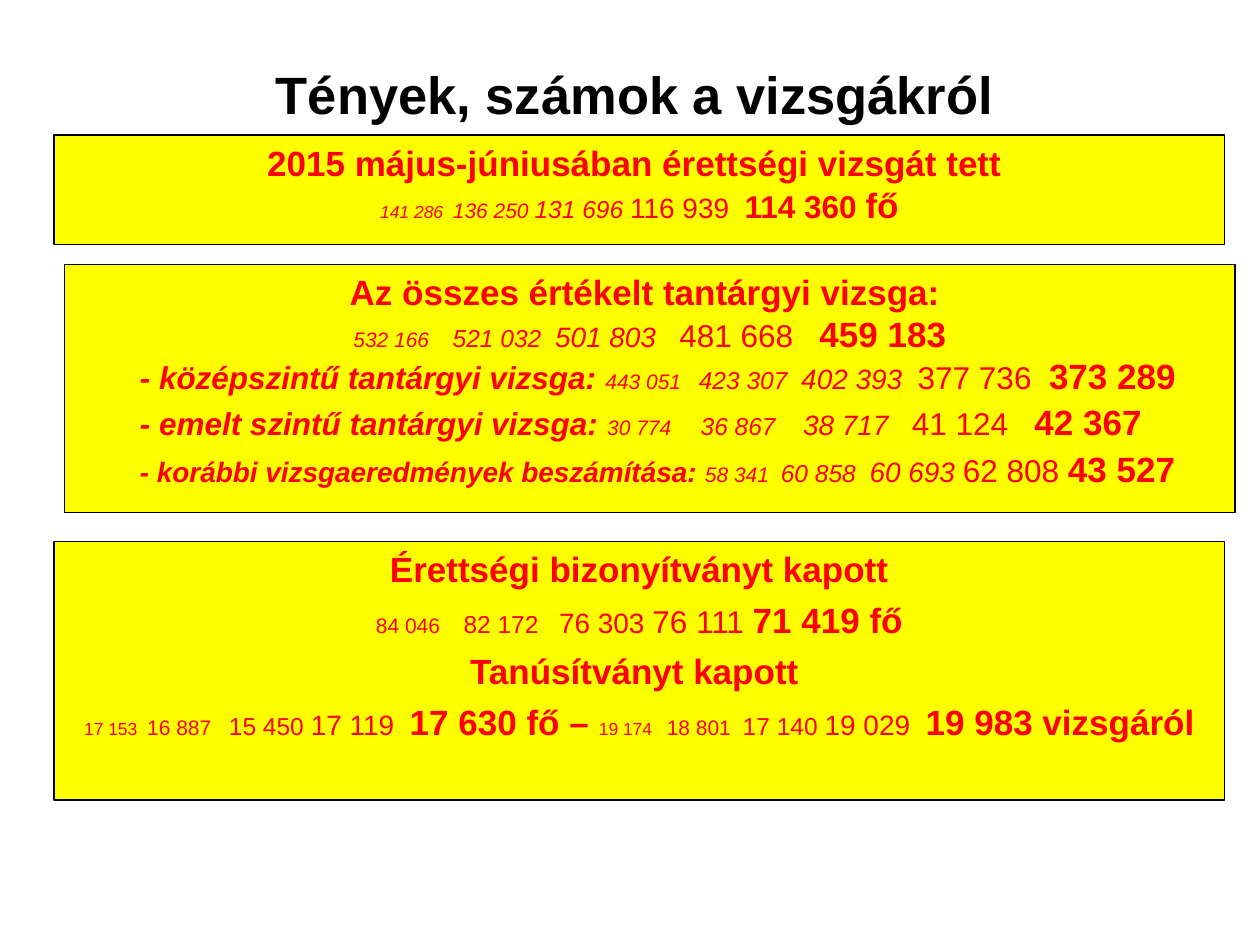
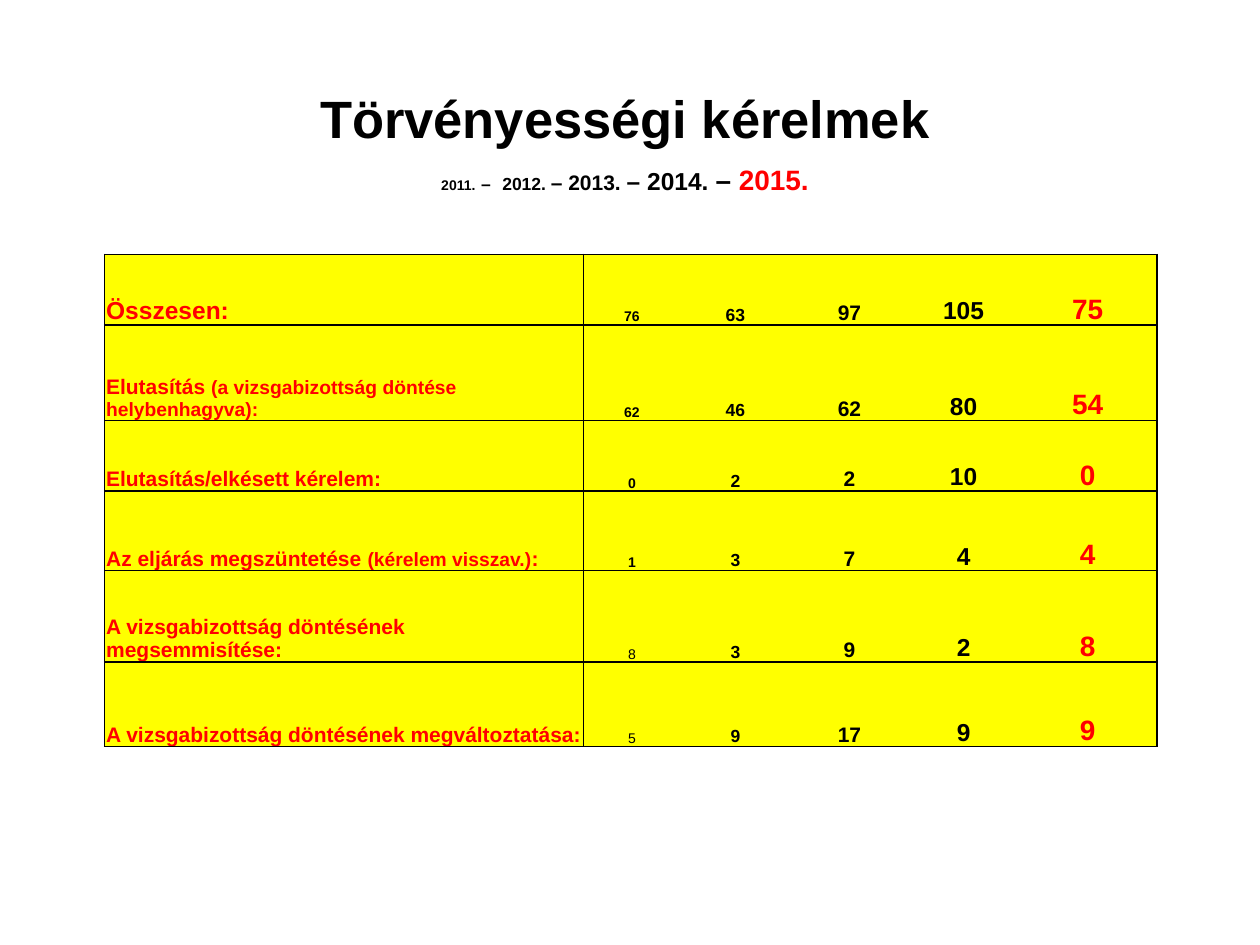
"""Build two slides of facts and figures about the 2015 school-leaving exams."""
from lxml.etree import SubElement
from pptx import Presentation
from pptx.dml.color import RGBColor
from pptx.enum.shapes import MSO_SHAPE
from pptx.enum.text import MSO_ANCHOR, PP_ALIGN
from pptx.oxml.ns import qn
from pptx.util import Cm, Pt

BLACK = RGBColor(0, 0, 0)
RED = RGBColor(255, 0, 0)
YELLOW = RGBColor(255, 255, 0)
FONT = "Arial"
SPACE_WIDTH = 0.278

CENTRED = {"margin": 0.97, "indent": -0.97, "align": PP_ALIGN.CENTER}
ITEM = {"margin": 2.06, "indent": -0.79, "align": PP_ALIGN.LEFT}

# Each run is (text, size, style, width of the gap after it in spaces).
EXAMINEES = [
    (CENTRED, 0, [("2015 május-júniusában érettségi vizsgát tett", 20, "b", 1)]),
    (CENTRED, 0, [("141 286", 10, "i", 2), ("136 250", 12, "i", 1), ("131 696", 14, "i", 1),
                  ("116 939", 16, "", 2), ("114 360", 18, "b", 1), ("fő", 20, "b", 0)]),
]
SUBJECT_EXAMS = [
    (CENTRED, 0, [("Az összes értékelt tantárgyi vizsga:", 20, "b", 1)]),
    (CENTRED, 0, [("532 166", 12, "i", 4), ("521 032", 14, "i", 2), ("501 803", 16, "i", 3),
                  ("481 668", 18, "", 3), ("459 183", 20, "b", 0)]),
    (ITEM, 0, [("- középszintű tantárgyi vizsga:", 18, "bi", 1), ("443 051", 12, "i", 3),
               ("423 307", 14, "i", 2), ("402 393", 16, "i", 2), ("377 736", 18, "", 2),
               ("373 289", 20, "b", 0)]),
    (ITEM, 2.5, [("- emelt szintű tantárgyi vizsga:", 18, "bi", 1), ("30 774", 12, "i", 5),
                 ("36 867", 14, "i", 4), ("38 717", 16, "i", 3), ("41 124", 18, "", 3),
                 ("42 367", 20, "b", 0)]),
    (ITEM, 2.5, [("- korábbi vizsgaeredmények beszámítása:", 16, "bi", 1), ("58 341", 12, "i", 2),
                 ("60 858", 14, "i", 2), ("60 693", 16, "i", 1), ("62 808", 18, "", 1),
                 ("43 527", 20, "b", 0)]),
]
CERTIFICATES = [
    (CENTRED, 0, [("Érettségi bizonyítványt kapott", 20, "b", 0)]),
    (CENTRED, 5, [("84 046", 12, "", 4), ("82 172", 14, "", 3), ("76 303", 16, "", 1),
                  ("76 111", 18, "", 1), ("71 419 fő", 20, "b", 0)]),
    (CENTRED, 5, [("Tanúsítványt kapott", 20, "b", 1)]),
    (CENTRED, 5, [("17 153", 10, "", 2), ("16 887", 12, "", 3), ("15 450", 14, "", 1),
                  ("17 119", 16, "", 2), ("17 630 fő –", 20, "b", 1), ("19 174", 10, "", 3),
                  ("18 801", 12, "", 2), ("17 140", 14, "", 1), ("19 029", 16, "", 2),
                  ("19 983 vizsgáról", 20, "b", 0)]),
]
PANELS = [
    ((1.09, 2.72, 23.6, 2.21), EXAMINEES),
    ((1.3, 5.33, 23.6, 5), SUBJECT_EXAMS),
    ((1.09, 10.92, 23.6, 5.21), CERTIFICATES),
]

FACTS_TITLE = [("Tények, számok a vizsgákról", 30, BLACK, 1)]
REQUESTS_TITLE = [("Törvényességi kérelmek", 30, BLACK, 0)]
YEARS = [("2011.", 8, BLACK, 0), (" ", 11, BLACK, 0), ("–", 10, BLACK, 0), (" ", 24, BLACK, 0),
         ("2012.", 10, BLACK, 1), ("– 2013.", 12, BLACK, 1), ("– 2014.", 14, BLACK, 1),
         ("–", 16, BLACK, 1), ("2015.", 16, RED, 0)]

YEAR_STYLES = [(8, BLACK), (10, BLACK), (12, BLACK), (14, BLACK), (16, RED)]
REQUESTS = [
    (1.42, [("Összesen:", 14, 0)], [76, 63, 97, 105, 75], "b"),
    (1.93, [("Elutasítás", 12, 1), ("(a vizsgabizottság döntése helybenhagyva):", 11, 0)],
     [62, 46, 62, 80, 54], "b"),
    (1.42, [("Elutasítás/elkésett kérelem:", 12, 0)], [0, 2, 2, 10, 0], "b"),
    (1.6, [("Az eljárás megszüntetése", 12, 1), ("(kérelem visszav.)", 11, 0), (":", 12, 0)],
     [1, 3, 7, 4, 4], "b"),
    (1.85, [("A vizsgabizottság döntésének megsemmisítése:", 12, 0)], [8, 3, 9, 2, 8], ""),
    (1.7, [("A vizsgabizottság döntésének megváltoztatása:", 12, 0)], [5, 9, 17, 9, 9], ""),
]
COLUMN_WIDTHS = [9.65, 1.96, 2.21, 2.39, 2.21, 2.79]
CELL_FORMAT = {"margin_left": Cm(0.03), "margin_right": Cm(0.03), "margin_top": Cm(0.03),
               "margin_bottom": 0, "vertical_anchor": MSO_ANCHOR.BOTTOM}


def add_run(paragraph, text, size, style, color, gap=0):
    run = paragraph.add_run()
    run.text = text
    font_format = {"name": FONT, "size": Pt(size), "bold": "b" in style, "italic": "i" in style}
    for name, value in font_format.items():
        setattr(run.font, name, value)
    run.font.color.rgb = color
    if gap == 1:
        run.text = text + " "
    elif gap > 1:
        space = add_run(paragraph, " ", size, style, color)
        extra = (gap - 1) * SPACE_WIDTH * size
        space.font._element.set("spc", str(round(extra * 100)))
    return run


def add_title(slide, box, first_line, second_line=()):
    frame = slide.shapes.add_textbox(*map(Cm, box)).text_frame
    frame.word_wrap = True
    frame.vertical_anchor = MSO_ANCHOR.MIDDLE
    paragraph = frame.paragraphs[0]
    paragraph.alignment = PP_ALIGN.CENTER
    for text, size, color, gap in first_line:
        add_run(paragraph, text, size, "b", color, gap)
    if second_line:
        paragraph.add_line_break()
    for text, size, color, gap in second_line:
        add_run(paragraph, text, size, "b", color, gap)


def add_panel(slide, box, lines):
    panel = slide.shapes.add_shape(MSO_SHAPE.RECTANGLE, *map(Cm, box))
    panel.shadow.inherit = False
    panel.fill.solid()
    panel.fill.fore_color.rgb = YELLOW
    panel.line.color.rgb = BLACK
    panel.line.width = Pt(0.75)
    frame = panel.text_frame
    frame.word_wrap = True
    frame.vertical_anchor = MSO_ANCHOR.TOP
    for index, (layout, space_before, runs) in enumerate(lines):
        paragraph = frame.add_paragraph() if index else frame.paragraphs[0]
        paragraph.alignment = layout["align"]
        paragraph.level = int(layout is ITEM)
        paragraph.space_before = Pt(space_before)
        properties = paragraph._p.get_or_add_pPr()
        properties.set("marL", str(Cm(layout["margin"])))
        properties.set("indent", str(Cm(layout["indent"])))
        for text, size, style, gap in runs:
            add_run(paragraph, text, size, style, RED, gap)


def add_borders(cell, sides):
    properties = cell._tc.get_or_add_tcPr()
    for side in "LRTB":
        line = SubElement(properties, qn(f"a:ln{side}"), w=str(Pt(1)))
        if side in sides:
            fill = SubElement(line, qn("a:solidFill"))
            SubElement(fill, qn("a:srgbClr"), val=str(BLACK))
        else:
            SubElement(line, qn("a:noFill"))


def format_cell(cell, sides):
    for name, value in CELL_FORMAT.items():
        setattr(cell, name, value)
    add_borders(cell, sides)
    cell.fill.solid()
    cell.fill.fore_color.rgb = YELLOW
    return cell.text_frame.paragraphs[0]


def add_requests_table(slide):
    heights = [row[0] for row in REQUESTS]
    box = (2.11, 5.13, sum(COLUMN_WIDTHS), sum(heights))
    table = slide.shapes.add_table(len(REQUESTS), len(COLUMN_WIDTHS), *map(Cm, box)).table
    table.first_row = table.horz_banding = False
    for column, width in zip(table.columns, COLUMN_WIDTHS):
        column.width = Cm(width)
    for row, (height, label, counts, first_style) in zip(table.rows, REQUESTS):
        row.height = Cm(height)
        label_cell, *count_cells = row.cells
        paragraph = format_cell(label_cell, "LRTB")
        for text, size, gap in label:
            add_run(paragraph, text, size, "b", RED, gap)
        sides = ["LTB", "TB", "TB", "TB", "RTB"]
        styles = [first_style] + ["b"] * 4
        for cell, count, (size, color), side, style in zip(
                count_cells, counts, YEAR_STYLES, sides, styles):
            paragraph = format_cell(cell, side)
            paragraph.alignment = PP_ALIGN.CENTER
            add_run(paragraph, str(count), size, style, color)


def main():
    presentation = Presentation()
    presentation.slide_width, presentation.slide_height = Cm(25.4), Cm(19.05)
    blank = presentation.slide_layouts[6]

    facts = presentation.slides.add_slide(blank)
    add_title(facts, (2.9, 0.71, 20.09, 2.36), FACTS_TITLE)
    for box, lines in PANELS:
        add_panel(facts, box, lines)

    requests = presentation.slides.add_slide(blank)
    add_title(requests, (4.7, 1.73, 15.8, 2.29), REQUESTS_TITLE, YEARS)
    add_requests_table(requests)

    presentation.save("out.pptx")


if __name__ == "__main__":
    main()
